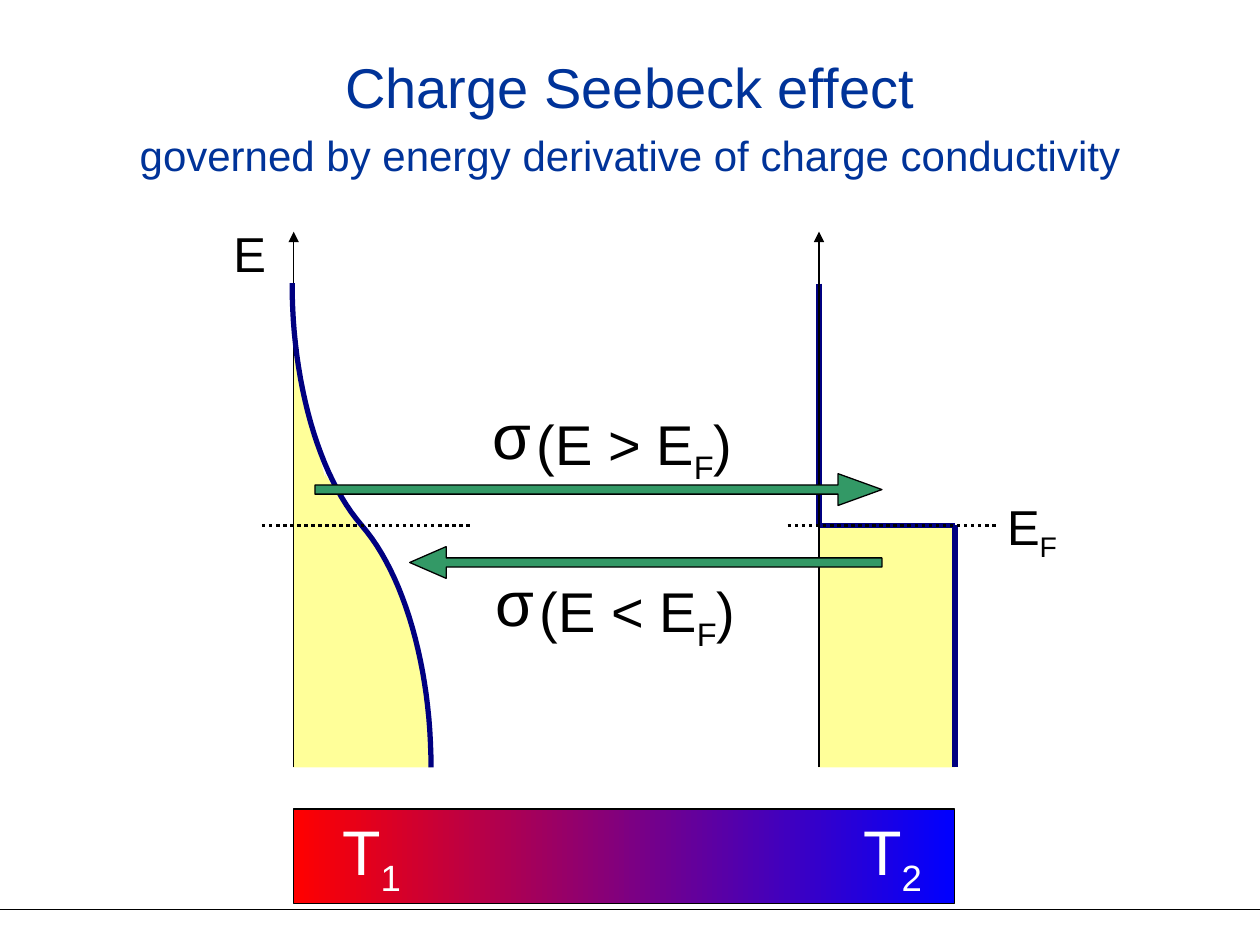
from lxml.etree import SubElement
from pptx import Presentation
from pptx.dml.color import RGBColor
from pptx.enum.dml import MSO_LINE
from pptx.enum.shapes import MSO_CONNECTOR, MSO_SHAPE as Shape
from pptx.enum.text import MSO_AUTO_SIZE as AutoSize, PP_ALIGN as Align
from pptx.oxml.ns import qn
from pptx.util import Cm, Pt

COLORS = {
    "title": "003399", "text": "000000", "light": "FFFFFF", "ink": "000000",
    "curve": "000080", "filled": "FFFF99", "flow": "339966",
    "hot": "FF0000", "cold": "0000FF",
}
HOT_X, COLD_X = 5.92, 16.51
STATES_WIDTH = 2.74
AXIS_TOP, STATES_TOP, FERMI_Y, BASE_Y = 4.67, 5.72, 10.59, 15.47
# Bezier offsets of the lower half of the curve from its middle point
CURVE_OFFSETS = [(0, 0), (0.86, 0.99), (1.4, 2.87), (1.4, 4.88)]


def color(name):
    return RGBColor.from_string(COLORS[name])


def half_curve(sign, steps=24):
    """Sample half of the occupation curve, going down (+1) or up (-1) from E_F."""
    points = []
    for step in range(steps + 1):
        t = step / steps
        weights = [(1 - t) ** 3, 3 * t * (1 - t) ** 2, 3 * t ** 2 * (1 - t), t ** 3]
        dx, dy = (sum(w * p[i] for w, p in zip(weights, CURVE_OFFSETS)) for i in (0, 1))
        points.append((HOT_X + STATES_WIDTH / 2 + sign * dx, FERMI_Y + sign * dy))
    return points


class Diagram:
    font = "Arial"

    def __init__(self, slide):
        self.shapes = slide.shapes

    def paint(self, shape, fill=None, line=None, width=0.75):
        shape.shadow.inherit = False
        if fill:
            shape.fill.solid()
            shape.fill.fore_color.rgb = color(fill)
        else:
            shape.fill.background()
        if line:
            shape.line.color.rgb = color(line)
            shape.line.width = Pt(width)
        else:
            shape.line.fill.background()
        return shape

    def block(self, kind, left, top, width, height, fill, line=None):
        shape = self.shapes.add_shape(kind, Cm(left), Cm(top), Cm(width), Cm(height))
        return self.paint(shape, fill, line)

    def flow_arrow(self, kind, left, top, width, head):
        arrow = self.block(kind, left, top, width, 0.64, "flow", "ink")
        arrow.adjustments[0] = 0.29
        arrow.adjustments[1] = head

    def gradient_bar(self, left, top, width, height):
        bar = self.block(Shape.RECTANGLE, left, top, width, height, "hot", "ink")
        bar.fill.gradient()
        bar.fill.gradient_angle = 0
        for stop, position, name in zip(bar.fill.gradient_stops, (0, 1), ("hot", "cold")):
            stop.position = position
            stop.color.rgb = color(name)

    def outline(self, points, closed, **style):
        corners = [(Cm(x), Cm(y)) for x, y in points]
        builder = self.shapes.build_freeform(*corners[0])
        builder.add_line_segments(corners[1:], close=closed)
        self.paint(builder.convert_to_shape(), **style)

    def line(self, start, end, stroke="ink", width=0.75, dash=None, arrow=False):
        ends = [Cm(value) for value in (*start, *end)]
        connector = self.shapes.add_connector(MSO_CONNECTOR.STRAIGHT, *ends)
        connector.line.color.rgb = color(stroke)
        connector.line.width = Pt(width)
        if dash:
            connector.line.dash_style = dash
        properties = connector._element.spPr
        if arrow:
            SubElement(properties.find(qn("a:ln")), qn("a:tailEnd"), type="triangle")
        SubElement(properties, qn("a:effectLst"))

    def text_box(self, left, top, width, height, wrap=False):
        box = self.shapes.add_textbox(Cm(left), Cm(top), Cm(width), Cm(height))
        frame = box.text_frame
        frame.word_wrap = wrap
        frame.auto_size = AutoSize.SHAPE_TO_FIT_TEXT
        return frame

    def add_runs(self, paragraph, runs, size, ink="text", align=Align.CENTER):
        """Fill a paragraph; a run starting with "_" becomes a subscript."""
        paragraph.alignment = align
        for content in runs:
            run = paragraph.add_run()
            run.text = content.removeprefix("_")
            run.font.name = self.font
            run.font.size = Pt(size)
            run.font.color.rgb = color(ink)
            if content.startswith("_"):
                run._r.get_or_add_rPr().set("baseline", "-25000")

    def label(self, left, top, width, height, runs, size):
        self.add_runs(self.text_box(left, top, width, height).paragraphs[0], runs, size)

    def heading(self, left, top, width, height, lines):
        frame = self.text_box(left, top, width, height, wrap=True)
        for index, (content, size) in enumerate(lines):
            paragraph = frame.add_paragraph() if index else frame.paragraphs[0]
            paragraph.line_spacing = 1.2
            self.add_runs(paragraph, [content], size, "title")

    def tabbed_label(self, left, top, width, height, runs, size, margin, tab):
        frame = self.text_box(left, top, width, height, wrap=True)
        frame.margin_left = Cm(margin)
        paragraph = frame.paragraphs[0]
        tabs = SubElement(paragraph._p.get_or_add_pPr(), qn("a:tabLst"))
        SubElement(tabs, qn("a:tab"), pos=str(Cm(tab)), algn="l")
        self.add_runs(paragraph, runs, size, "light", Align.LEFT)


def main():
    deck = Presentation()
    deck.slide_width, deck.slide_height = Cm(25.4), Cm(19.05)
    diagram = Diagram(deck.slides.add_slide(deck.slide_layouts[6]))
    upper, lower = half_curve(-1), half_curve(1)
    step_right = COLD_X + STATES_WIDTH
    states_height = BASE_Y - FERMI_Y

    diagram.line((0, 18.34), (25.4, 18.34))
    diagram.heading(0, 0.66, 25.4, 3.1, [
        ("Charge Seebeck effect", 32),
        ("governed by energy derivative of charge conductivity", 24),
    ])

    # Occupied states
    diagram.block(Shape.RIGHT_TRIANGLE, 6.55, 9.55, 1.07, 1.7, "filled")
    diagram.block(Shape.RIGHT_TRIANGLE, HOT_X, 7.01, 1.07, 4.45, "filled")
    diagram.outline([(HOT_X, FERMI_Y), *lower, (HOT_X, BASE_Y)], True, fill="filled")
    diagram.block(Shape.RECTANGLE, COLD_X, FERMI_Y, STATES_WIDTH, states_height, "filled")

    # Temperature bar
    bar_width = step_right - HOT_X
    diagram.gradient_bar(HOT_X, 16.31, bar_width, 1.9)
    diagram.tabbed_label(HOT_X, 16.26, bar_width, 1.78, ["T", "_1", "\tT", "_2"], 36,
                         margin=0.98, tab=10.5)

    # Cold side: sharp step at the Fermi energy
    step = [(COLD_X, STATES_TOP), (COLD_X, FERMI_Y), (step_right, FERMI_Y), (step_right, BASE_Y)]
    for start, end in zip(step, step[1:]):
        diagram.line(start, end, "curve", 3)

    for sign, sigma_left, sigma_top in ((">", 9.68, 7.87), ("<", 9.74, 11.23)):
        diagram.label(sigma_left + 0.85, sigma_top + 0.27, 4.52, 1.6,
                      [f"(E {sign} E", "_F", ")"], 32)
        diagram.label(sigma_left, sigma_top, 1.27, 1.78, ["σ"], 36)
    diagram.label(20.02, 9.88, 1.57, 1.45, ["E", "_F"], 28)
    diagram.label(4.45, 4.39, 1.17, 1.45, ["E"], 28)

    # Hot side: smooth occupation curve
    diagram.line((HOT_X, BASE_Y), (HOT_X, AXIS_TOP), arrow=True)
    diagram.outline(upper[::-1] + lower[1:], False, line="curve", width=3)
    diagram.line((COLD_X, BASE_Y), (COLD_X, AXIS_TOP), arrow=True)

    diagram.flow_arrow(Shape.RIGHT_ARROW, 6.35, 9.55, 11.43, 1.38)
    diagram.flow_arrow(Shape.LEFT_ARROW, 8.26, 11.02, 9.52, 1.15)
    for left in (15.88, 5.28):
        diagram.line((left, FERMI_Y), (left + 4.24, FERMI_Y), width=2, dash=MSO_LINE.ROUND_DOT)

    deck.save("out.pptx")


if __name__ == "__main__":
    main()
